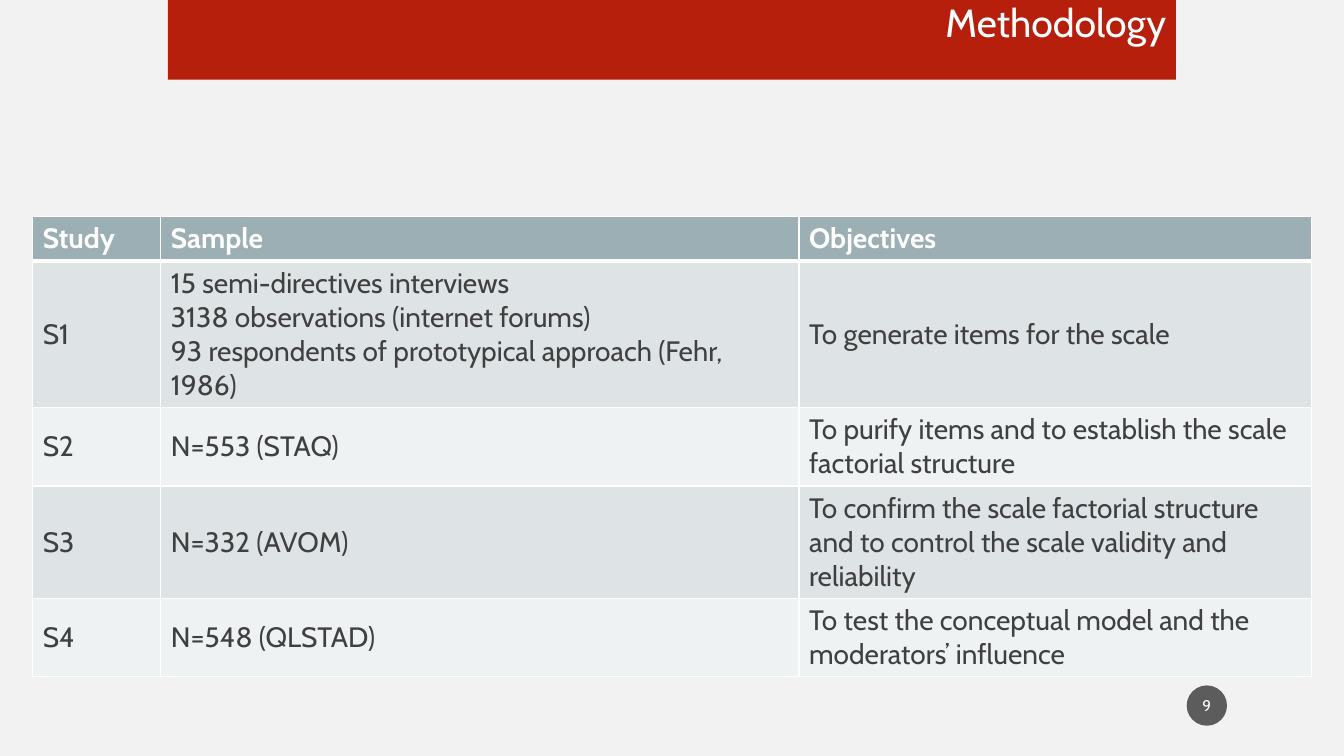
import pptx
import pptx.util
import pptx.dml.color
import pptx.enum.shapes
import pptx.enum.text
import pptx.oxml
import pptx.oxml.ns

In = pptx.util.Inches
Align = pptx.enum.text.PP_ALIGN
Anchor = pptx.enum.text.MSO_ANCHOR
Shape = pptx.enum.shapes.MSO_SHAPE

WIDE, HIGH = 13.33, 7.5
FONT = "Cabin"
COLORS = {
    "page": "F2F2F2", "banner": "B51F0B", "badge": "1D1D1D",
    "head": "9BAFB5", "dark": "DEE3E5", "light": "EFF2F3",
    "text": "404040", "white": "FFFFFF",
}
COLS = (1.27, 6.33, 5.08)
ROW = 0.41
ROWS = (
    ("Study", "Sample", "Objectives"),
    ("S1",
     "15 semi-directives interviews\n"
     "3138 observations (internet forums)\n"
     "93 respondents of prototypical approach (Fehr, 1986)",
     "To generate items for the scale"),
    ("S2", "N=553 (STAQ)",
     "To purify items and to establish the scale factorial structure"),
    ("S3", "N=332 (AVOM)",
     "To confirm the scale factorial structure and to control the scale "
     "validity and reliability"),
    ("S4", "N=548 (QLSTAD)",
     "To test the conceptual model and the moderators’ influence"),
)


def color(name):
    return pptx.dml.color.RGBColor.from_string(COLORS[name])


def paint(fill, name):
    fill.solid()
    fill.fore_color.rgb = color(name)


def write(frame, text, size=20, ink="text", bold=False, align=Align.LEFT):
    frame.word_wrap = True
    frame.text = text
    for para in frame.paragraphs:
        para.alignment = align
        for run in para.runs:
            font = run.font
            font.name, font.size, font.bold = FONT, pptx.util.Pt(size), bold
            font.color.rgb = color(ink)


def block(slide, kind, box, fill):
    shape = slide.shapes.add_shape(kind, *map(In, box))
    shape.shadow.inherit = False
    shape.line.fill.background()
    paint(shape.fill, fill)
    return shape


def border(cell, **widths):
    # Edges come before the fill in the cell properties
    props = cell._tc.get_or_add_tcPr()
    for spot, side in enumerate("LRTB"):
        width = pptx.util.Pt(widths.get(side, 1))
        props.insert(spot, pptx.oxml.parse_xml(
            f'<a:ln{side} {pptx.oxml.ns.nsdecls("a")} w="{width}">'
            f'<a:solidFill><a:srgbClr val="{COLORS["white"]}"/></a:solidFill>'
            f'</a:ln{side}>'))


def banner(slide, box):
    left, top, width, height = box
    block(slide, Shape.RECTANGLE, box, "banner")
    title = slide.shapes.title
    span = 0.721 * width
    title.left, title.top = In(left + width - span), In(top - 0.07)
    title.width, title.height = In(span), In(0.57)
    write(title.text_frame, "Methodology", size=28, ink="white",
          align=Align.RIGHT)
    title.text_frame.vertical_anchor = Anchor.TOP
    title.text_frame.auto_size = pptx.enum.text.MSO_AUTO_SIZE.NONE
    # Bring the title in front of its band
    slide.shapes._spTree.append(title._element)


def studies(slide, box):
    frame = slide.shapes.add_table(len(ROWS), len(COLS), *map(In, box))
    table = frame.table
    for col, width in zip(table.columns, COLS):
        col.width = In(width)
    for row in table.rows:
        row.height = In(ROW)
    frame.height = In(box[3])
    for r, texts in enumerate(ROWS):
        head = r == 0
        fill = "head" if head else "dark" if r % 2 else "light"
        for c, text in enumerate(texts):
            cell = table.cell(r, c)
            write(cell.text_frame, text, bold=head,
                  ink="white" if head else "text")
            cell.vertical_anchor = Anchor.MIDDLE
            paint(cell.fill, fill)
            border(cell, T=3 if r == 1 else 1, B=3 if head else 1)


def badge(slide, box):
    disc = block(slide, Shape.OVAL, box, "badge")
    tone = disc.fill._xPr.find(".//" + pptx.oxml.ns.qn("a:srgbClr"))
    tone.append(pptx.oxml.parse_xml(
        f'<a:alpha {pptx.oxml.ns.nsdecls("a")} val="70000"/>'))
    frame = disc.text_frame
    frame.margin_left = frame.margin_right = In(0.02)
    frame.vertical_anchor = Anchor.MIDDLE
    write(frame, "9", size=11, ink="white", align=Align.CENTER)


def main():
    deck = pptx.Presentation()
    deck.slide_width, deck.slide_height = In(WIDE), In(HIGH)
    slide = deck.slides.add_slide(deck.slide_layouts[5])
    paint(slide.background.fill, "page")
    # Page number, table of studies, title band
    badge(slide, (11.77, 6.8, 0.4, 0.4))
    wide = sum(COLS)
    studies(slide, ((WIDE - wide) / 2, 2.15, wide, 3.83))
    banner(slide, (WIDE / 8, 0, WIDE * 0.75, 0.79))
    deck.save("out.pptx")


if __name__ == "__main__":
    main()
